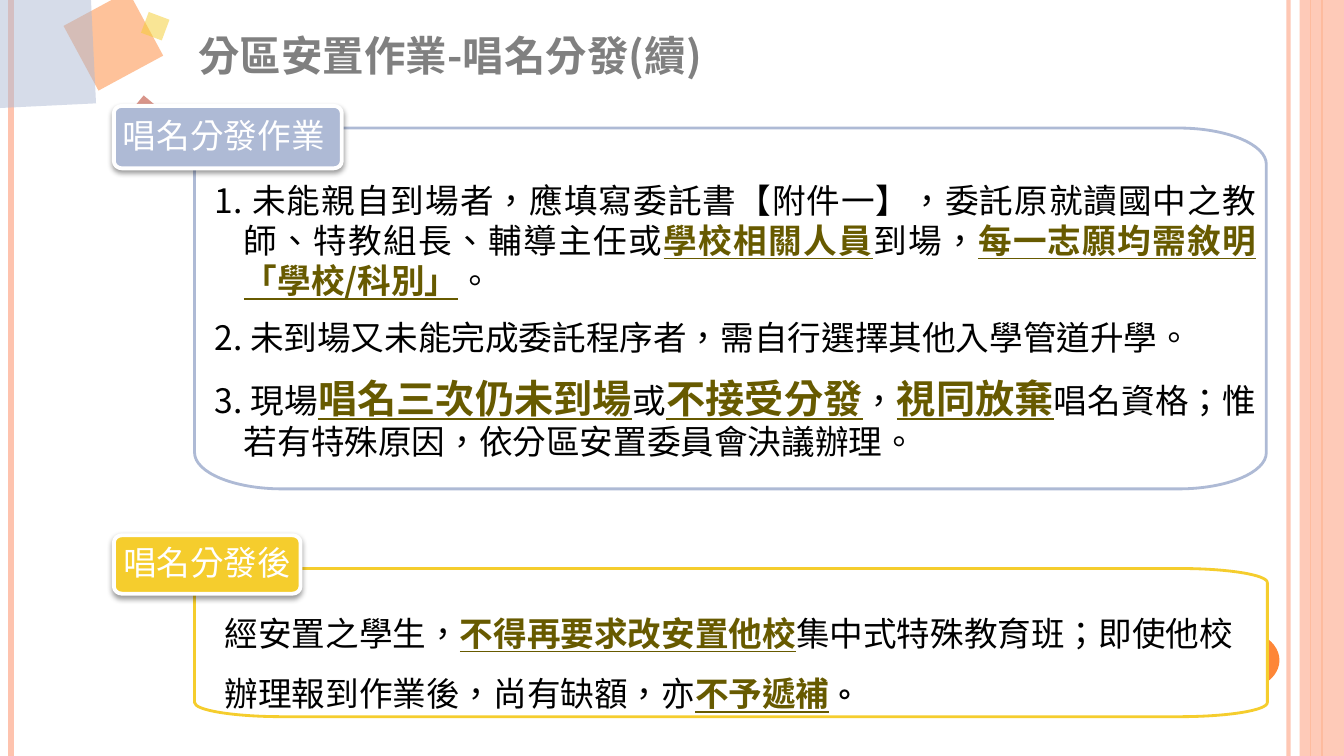
from dataclasses import dataclass

from lxml import etree
from pptx import Presentation
from pptx.dml.color import RGBColor
from pptx.enum.lang import MSO_LANGUAGE_ID
from pptx.enum.shapes import MSO_CONNECTOR, MSO_SHAPE
from pptx.enum.text import MSO_ANCHOR, PP_ALIGN
from pptx.oxml.ns import qn
from pptx.shapes.autoshape import Shape
from pptx.slide import Slide
from pptx.text.text import TextFrame, _Paragraph
from pptx.util import Emu, Inches, Pt

STRAIGHT = MSO_CONNECTOR.STRAIGHT
RECT = MSO_SHAPE.RECTANGLE
OVAL = MSO_SHAPE.OVAL
TOP = MSO_ANCHOR.TOP
MIDDLE = MSO_ANCHOR.MIDDLE
LEFT = PP_ALIGN.LEFT
JUSTIFY = PP_ALIGN.JUSTIFY
TAIWAN = MSO_LANGUAGE_ID.TAIWAN if hasattr(MSO_LANGUAGE_ID, "TAIWAN") else None
UNITS = 1000
BEND = 0.55


@dataclass(frozen=True)
class Theme:
    font: str = "Noto Sans CJK SC"
    peach: str = "FEC3AE"
    orange: str = "FE8637"
    blue: str = "AEBAD5"
    red: str = "B32C16"
    yellow: str = "F5CD2D"
    white: str = "FFFFFF"
    black: str = "000000"
    gray: str = "808080"
    olive: str = "675A00"
    title: float = 29.6
    large: float = 28
    body: float = 24
    small: float = 22


THEME = Theme()


@dataclass(frozen=True)
class Box:
    left: float
    top: float
    width: float
    height: float


@dataclass(frozen=True)
class Rule:
    x: float
    color: str
    width: float
    alpha: int = 100


@dataclass(frozen=True)
class Decor:
    box: Box
    color: str
    alpha: int = 50
    turn: float = 0
    kind: MSO_SHAPE = RECT


@dataclass(frozen=True)
class Span:
    text: str
    color: str = THEME.black
    size: float = THEME.body
    bold: bool = False
    under: bool = False


@dataclass(frozen=True)
class Style:
    align: PP_ALIGN = LEFT
    margin: float = 0
    indent: float = 0
    pitch: float = 1
    after: float = 0


@dataclass(frozen=True)
class Panel:
    color: str
    frame: Box
    curve: tuple[float, float]
    inset: float
    style: Style
    paras: list[list[Span]]
    tab: Box
    label: str


def mark(text: str, size: float = THEME.body) -> Span:
    return Span(text, THEME.olive, size, True, True)


RULES = [
    Rule(12.78, THEME.peach, 3, 93),
    Rule(0.11, THEME.peach, 4.5),
    Rule(13.11, THEME.orange, 1.5),
    Rule(13, THEME.orange, 0.75),
]
DECOR = [
    Decor(Box(12.89, 0, 0.44, 7.5), THEME.peach, 87),
    Decor(Box(11.89, 6.25, 0.8, 0.6), THEME.orange, 100, kind=OVAL),
    Decor(Box(0.76, 0.04, 0.73, 0.73), THEME.orange, turn=331.6),
    Decor(Box(-0.46, -0.32, 1.38, 1.38), THEME.blue, turn=357.2),
    Decor(Box(1.29, 1.01, 0.31, 0.31), THEME.red, turn=309.8),
    Decor(Box(1.43, 0.15, 0.22, 0.22), THEME.yellow, turn=290.5),
]
PANELS = [
    Panel(
        THEME.blue, Box(1.93, 1.27, 10.63, 3.58), (0.87, 0.36), 0.51,
        Style(JUSTIFY, 0.39, -0.29, 1, 12),
        [
            [
                Span("1. 未能親自到場者，應填寫委託書【附件一】，委託原就讀國中之教師、特教組長、輔導主任或"),
                mark("學校相關人員"),
                Span("到場，"),
                mark("每一志願均需敘明「學校/科別」"),
                Span("。"),
            ],
            [Span("2. 未到場又未能完成委託程序者，需自行選擇其他入學管道升學。")],
            [
                Span("3. 現場"),
                mark("唱名三次仍未到場", THEME.large),
                Span("或"),
                mark("不接受分發", THEME.large),
                Span("，"),
                mark("視同放棄", THEME.large),
                Span("唱名資格；惟若有特殊原因，依分區安置委員會決議辦理。"),
            ],
        ],
        Box(1.13, 1.05, 2.26, 0.62), "唱名分發作業",
    ),
    Panel(
        THEME.yellow, Box(1.93, 5.64, 10.64, 1.47), (0.87, 0.14), 0.24,
        Style(LEFT, 0.2, 0, 1.5),
        [[
            Span("經安置之學生，"),
            mark("不得再要求改安置他校"),
            Span("集中式特殊教育班；即使他校辦理報到作業後，尚有缺額，亦"),
            mark("不予遞補"),
            Span("。", size=THEME.small, bold=True),
        ]],
        Box(1.13, 5.31, 1.85, 0.58), "唱名分發後",
    ),
]


def place(box: Box) -> tuple[Emu, Emu, Emu, Emu]:
    return Inches(box.left), Inches(box.top), Inches(box.width), Inches(box.height)


def fade(node: etree._Element, alpha: int) -> None:
    for color in node.iter(qn("a:srgbClr")):
        etree.SubElement(color, qn("a:alpha")).set("val", str(alpha * 1000))


def paint(shape: Shape, color: str) -> None:
    shape.shadow.inherit = False
    shape.fill.solid()
    shape.fill.fore_color.rgb = RGBColor.from_string(color)


def draw_rule(slide: Slide, rule: Rule) -> None:
    x = Inches(rule.x)
    line = slide.shapes.add_connector(STRAIGHT, x, 0, x, Inches(7.5))
    line.line.color.rgb = RGBColor.from_string(rule.color)
    line.line.width = Pt(rule.width)
    props = line.element.spPr
    fade(props, rule.alpha)
    etree.SubElement(props, qn("a:effectLst"))


def draw_decor(slide: Slide, decor: Decor) -> None:
    shape = slide.shapes.add_shape(decor.kind, *place(decor.box))
    shape.rotation = decor.turn
    paint(shape, decor.color)
    shape.line.fill.background()
    fade(shape.element.spPr, decor.alpha)


def draw_round(slide: Slide, box: Box, curve: tuple[float, float],
               fill: str, edge: str, width: float) -> Shape:
    left, top, wide, high, rx, ry = (
        round(n * UNITS) for n in (box.left, box.top, box.width, box.height, *curve))
    arcs = [((0, ry), (0, 0), (rx, 0)),
            ((wide - rx, 0), (wide, 0), (wide, ry)),
            ((wide, high - ry), (wide, high), (wide - rx, high)),
            ((rx, high), (0, high), (0, high - ry))]
    points = [(left + x, top + y) for a, _, b in arcs for x, y in (a, b)]
    form = slide.shapes.build_freeform(*points[0], scale=Inches(1) / UNITS)
    form.add_line_segments(points[1:], close=True)
    shape = form.convert_to_shape()
    lines = list(shape.element.spPr.iter(qn("a:lnTo")))
    for line, (start, hub, end) in zip(lines[::2], arcs):
        line.tag = qn("a:cubicBezTo")
        for index, knot in enumerate((start, end)):
            x, y = (round(k + BEND * (h - k)) for k, h in zip(knot, hub))
            line.insert(index, line.makeelement(qn("a:pt"), x=str(x), y=str(y)))
    paint(shape, fill)
    shape.line.color.rgb = RGBColor.from_string(edge)
    shape.line.width = Pt(width)
    return shape


def cast_shade(shape: Shape) -> None:
    effects = shape.element.spPr.find(qn("a:effectLst"))
    shade = etree.SubElement(effects, qn("a:outerShdw"), blurRad=str(Pt(4)),
                             dist=str(Pt(2)), dir="5400000", rotWithShape="0")
    etree.SubElement(shade, qn("a:srgbClr"), val=THEME.black)
    fade(shade, 40)


def set_frame(frame: TextFrame, anchor: MSO_ANCHOR, left: float,
              top: float, right: float, low: float) -> None:
    frame.word_wrap = True
    frame.vertical_anchor = anchor
    frame.margin_left, frame.margin_top = Inches(left), Inches(top)
    frame.margin_right, frame.margin_bottom = Inches(right), Inches(low)


def write(para: _Paragraph, spans: list[Span], style: Style) -> None:
    para.alignment = style.align
    para.line_spacing = style.pitch
    para.space_before = Pt(0)
    para.space_after = Pt(style.after)
    props = para._p.get_or_add_pPr()
    props.set("marL", str(Inches(style.margin)))
    props.set("indent", str(Inches(style.indent)))
    for span in spans:
        run = para.add_run()
        run.text = span.text
        font = run.font
        font.name = THEME.font
        font.size = Pt(span.size)
        font.bold = span.bold
        font.underline = span.under
        font.color.rgb = RGBColor.from_string(span.color)
        run._r.rPr.set("lang", "zh-TW")
        etree.SubElement(run._r.rPr, qn("a:ea"), typeface=THEME.font)


def draw_panel(slide: Slide, panel: Panel) -> None:
    body = draw_round(slide, panel.frame, panel.curve, THEME.white, panel.color, 2)
    frame = body.text_frame
    set_frame(frame, TOP, 0.1, panel.inset, 0.1, 0)
    for index, spans in enumerate(panel.paras):
        para = frame.add_paragraph() if index else frame.paragraphs[0]
        write(para, spans, panel.style)
    tab = draw_round(slide, panel.tab, (0.08, 0.07), panel.color, THEME.white, 2.75)
    cast_shade(tab)
    set_frame(tab.text_frame, MIDDLE, 0.09, 0.06, 0.02, 0.06)
    write(tab.text_frame.paragraphs[0], [Span(panel.label, THEME.white)], Style(pitch=0.9))


def main() -> None:
    deck = Presentation()
    deck.slide_width, deck.slide_height = Inches(13.33), Inches(7.5)
    slide = deck.slides.add_slide(deck.slide_layouts[6])
    for rule in RULES:
        draw_rule(slide, rule)
    for decor in DECOR:
        draw_decor(slide, decor)
    title = slide.shapes.add_textbox(*place(Box(1.87, 0.26, 10.54, 0.58)))
    set_frame(title.text_frame, MIDDLE, 0.1, 0.05, 0.1, 0.05)
    write(title.text_frame.paragraphs[0],
          [Span("分區安置作業-唱名分發(續)", THEME.gray, THEME.title, True)], Style())
    for panel in PANELS:
        draw_panel(slide, panel)
    deck.save("out.pptx")


if __name__ == "__main__":
    main()
